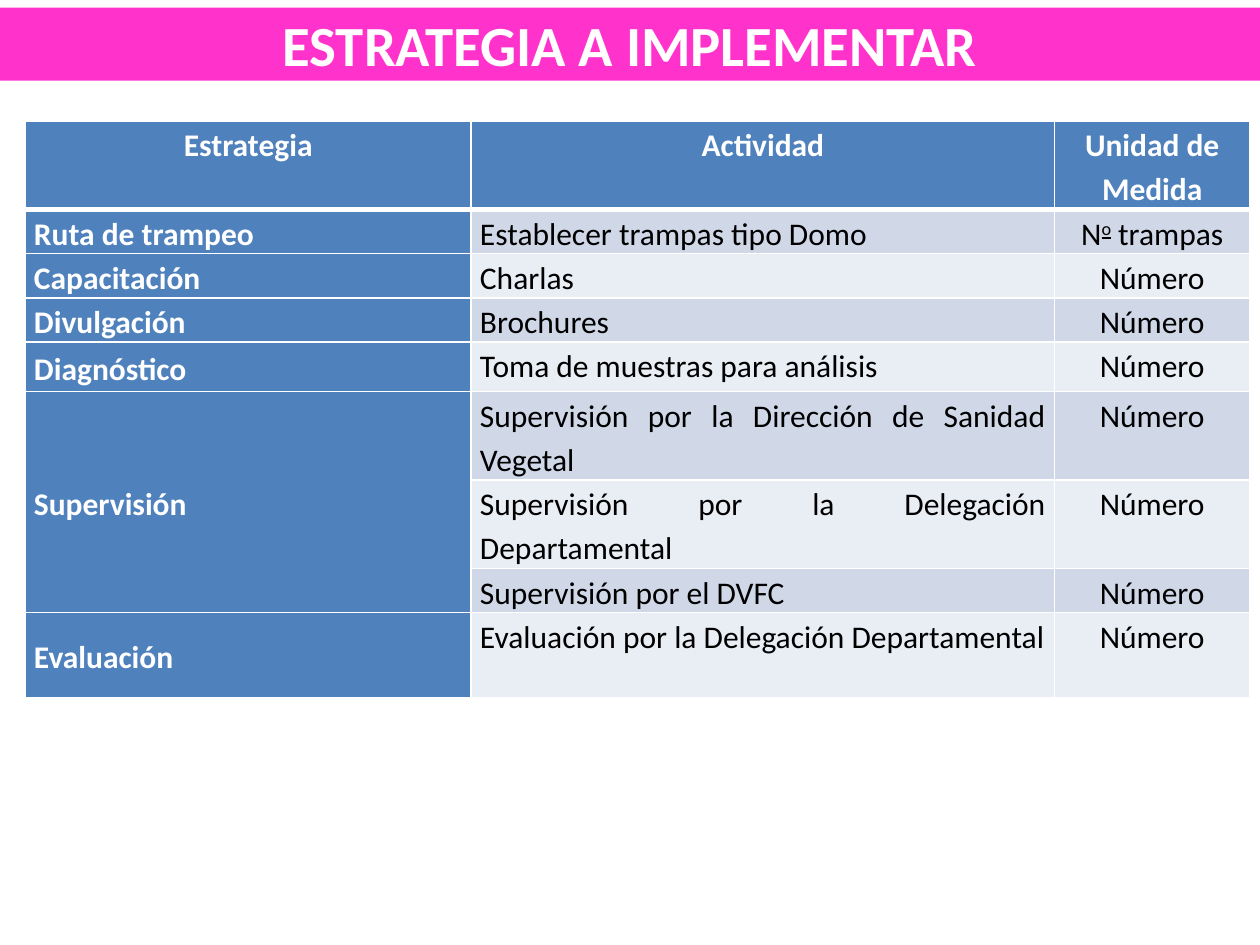
from lxml.etree import SubElement
from pptx import Presentation
from pptx.dml.color import RGBColor
from pptx.enum.text import MSO_ANCHOR as Anchor, MSO_AUTO_SIZE as AutoSize, PP_ALIGN as Align
from pptx.oxml.ns import qn
from pptx.util import Inches, Pt

FONT = "Calibri"
COLORS = {"banner": "FF33CC", "header": "4F81BD", "odd": "D0D8E8",
          "even": "E9EDF4", "white": "FFFFFF", "black": "000000"}
COLUMNS = [3.54, 4.63, 1.55]
LINE = 0.35  # height of one text line, the row unit of the table
ROW_LINES = [2, 1, 1, 1, 1.12, 2, 2, 1, 1.92]
HEADINGS = ["Estrategia", "Actividad", "Unidad de Medida"]
STRATEGIES = [
    ("Ruta de trampeo", ["Establecer trampas tipo Domo"]),
    ("Capacitación", ["Charlas"]),
    ("Divulgación", ["Brochures"]),
    ("Diagnóstico", ["Toma de muestras para análisis"]),
    ("Supervisión", ["Supervisión por la Dirección de Sanidad Vegetal",
                     "Supervisión por la Delegación Departamental",
                     "Supervisión por el DVFC"]),
    ("Evaluación", ["Evaluación por la Delegación Departamental"]),
]


def color(name):
    return RGBColor.from_string(COLORS[name])


def style_runs(paragraph, size, color_name, bold):
    for run in paragraph.runs:
        run.font.name, run.font.size, run.font.bold = FONT, Pt(size), bold
        run.font.color.rgb = color(color_name)


def add_borders(cell, top=1, bottom=1):
    properties = cell._tc.get_or_add_tcPr()
    for tag, width in (("a:lnL", 1), ("a:lnR", 1), ("a:lnT", top), ("a:lnB", bottom)):
        line = SubElement(properties, qn(tag), w=str(Pt(width)))
        fill = SubElement(line, qn("a:solidFill"))
        SubElement(fill, qn("a:srgbClr"), val=COLORS["white"])


def fill_cell(cell, parts, fill, align, heading=False, middle=False):
    """Write the text parts in a cell and give it its look."""
    cell.fill.solid()
    cell.fill.fore_color.rgb = color(fill)
    cell.margin_left = cell.margin_right = Inches(0.07)
    cell.margin_top = cell.margin_bottom = 0
    cell.vertical_anchor = Anchor.MIDDLE if middle else Anchor.TOP
    paragraph = cell.text_frame.paragraphs[0]
    paragraph.alignment, paragraph.line_spacing = align, 1.15
    for part in parts:
        paragraph.add_run().text = part
    style_runs(paragraph, 18, "white" if heading else "black", heading)


def add_banner(slide, left, top, width, height):
    title = slide.shapes.title
    title.left, title.top, title.width, title.height = map(Inches, (left, top, width, height))
    title.fill.solid()
    title.fill.fore_color.rgb = color("banner")
    frame = title.text_frame
    frame.text = "ESTRATEGIA A IMPLEMENTAR"
    frame.auto_size, frame.vertical_anchor = AutoSize.NONE, Anchor.MIDDLE
    frame.paragraphs[0].alignment = Align.CENTER
    style_runs(frame.paragraphs[0], 32.4, "white", True)


def add_strategy_table(slide, left, top):
    box = map(Inches, (left, top, sum(COLUMNS), LINE * sum(ROW_LINES)))
    table = slide.shapes.add_table(len(ROW_LINES), len(COLUMNS), *box).table
    for column, width in zip(table.columns, COLUMNS):
        column.width = Inches(width)
    for index, (row, lines) in enumerate(zip(table.rows, ROW_LINES)):
        row.height = Inches(LINE * lines)
        for cell in row.cells:
            add_borders(cell, 3 if index == 1 else 1, 3 if index == 0 else 1)

    # Heading row
    for index, heading in enumerate(HEADINGS):
        fill_cell(table.cell(0, index), [heading], "header", Align.CENTER, heading=True)

    # One strategy beside each group of activities
    row = 1
    for strategy, activities in STRATEGIES:
        first = table.cell(row, 0)
        if len(activities) > 1:
            first.merge(table.cell(row + len(activities) - 1, 0))
        fill_cell(first, [strategy], "header", Align.JUSTIFY, heading=True, middle=True)
        for activity in activities:
            band = "odd" if row % 2 else "even"
            unit = ["N", "o", " trampas"] if row == 1 else ["Número"]
            fill_cell(table.cell(row, 1), [activity], band, Align.JUSTIFY)
            fill_cell(table.cell(row, 2), unit, band, Align.CENTER)
            row += 1

    # Raised, underlined ordinal in the first unit
    ordinal = table.cell(1, 2).text_frame.paragraphs[0].runs[1]
    ordinal.font.underline = True
    ordinal._r.get_or_add_rPr().set("baseline", "30000")


def main():
    presentation = Presentation()
    presentation.slide_width, presentation.slide_height = Inches(10), Inches(7.5)
    slide = presentation.slides.add_slide(presentation.slide_layouts[5])
    add_banner(slide, 0, 0.06, 10, 0.58)
    add_strategy_table(slide, 0.2, 0.96)
    presentation.save("out.pptx")


if __name__ == "__main__":
    main()
